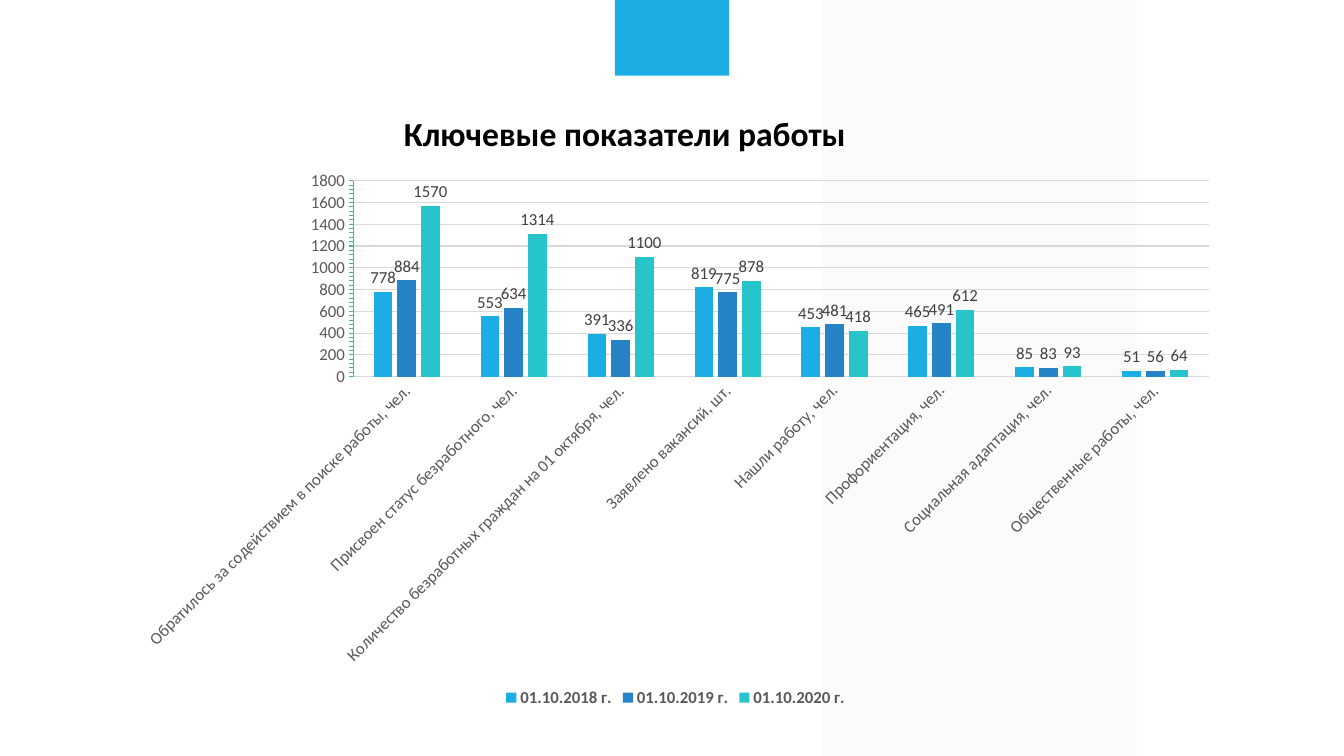
"""Build a slide with a clustered column chart of key work indicators."""
from dataclasses import dataclass

from lxml import etree
from pptx import Presentation
from pptx.chart.data import CategoryChartData
from pptx.dml.color import RGBColor
from pptx.enum.chart import XL_CHART_TYPE, XL_LABEL_POSITION, XL_LEGEND_POSITION, XL_TICK_MARK
from pptx.enum.shapes import MSO_SHAPE
from pptx.oxml.ns import qn
from pptx.util import Emu, Pt

PX = 9144
FONT = "Calibri"
BLACK = RGBColor(0x00, 0x00, 0x00)
DARK = RGBColor(0x40, 0x40, 0x40)
GREY = RGBColor(0x59, 0x59, 0x59)
RULE = RGBColor(0xD9, 0xD9, 0xD9)
PALE = RGBColor(0xF2, 0xF2, 0xF2)
GREEN = RGBColor(0x42, 0xBA, 0x97)
SKY = RGBColor(0x1C, 0xAD, 0xE4)
BLUE = RGBColor(0x26, 0x83, 0xC6)
TEAL = RGBColor(0x28, 0xC4, 0xCC)
COLUMNS = XL_CHART_TYPE.COLUMN_CLUSTERED
OUTSIDE_END = XL_LABEL_POSITION.OUTSIDE_END
BOTTOM = XL_LEGEND_POSITION.BOTTOM
TICK_NONE = XL_TICK_MARK.NONE
TICK_OUTSIDE = XL_TICK_MARK.OUTSIDE
PARALLELOGRAM = MSO_SHAPE.PARALLELOGRAM
RECTANGLE = MSO_SHAPE.RECTANGLE


@dataclass(frozen=True)
class Panel:
    kind: int
    box: tuple[int, int, int, int]
    color: RGBColor
    opacity: int = 100


@dataclass(frozen=True)
class Year:
    name: str
    values: tuple[int, ...]
    color: RGBColor


PANELS = (
    Panel(PARALLELOGRAM, (815, 0, 312, 750), PALE, 30),
    Panel(RECTANGLE, (610, 0, 113, 75), SKY),
)
CHART_BOX = (119, 79, 1102, 627)
TITLE = "Ключевые показатели работы"
CATEGORIES = (
    "Обратилось за содействием в поиске работы, чел.",
    "Присвоен статус безработного, чел.",
    "Количество безработных граждан на 01 октября, чел.",
    "Заявлено вакансий, шт.",
    "Нашли работу, чел.",
    "Профориентация, чел.",
    "Социальная адаптация, чел.",
    "Общественные работы, чел.",
)
YEARS = (
    Year("01.10.2018 г.", (778, 553, 391, 819, 453, 465, 85, 51), SKY),
    Year("01.10.2019 г.", (884, 634, 336, 775, 481, 491, 83, 56), BLUE),
    Year("01.10.2020 г.", (1570, 1314, 1100, 878, 418, 612, 93, 64), TEAL),
)


def emu(box: tuple[int, ...]) -> list[Emu]:
    """Turn px lengths into EMU."""
    return [Emu(v * PX) for v in box]


def style_font(font, size: int = 12, color: RGBColor = GREY, bold: bool = False) -> None:
    """Set the typeface, size, colour and weight."""
    font.name = FONT
    font.size = Pt(size)
    font.bold = bold
    font.color.rgb = color


def style_line(line, color: RGBColor) -> None:
    """Give a chart line its colour and thin width."""
    line.color.rgb = color
    line.width = Pt(0.75)


def add_panel(s, panel: Panel) -> None:
    """Draw one plain decorative panel."""
    sp = s.shapes.add_shape(panel.kind, *emu(panel.box))
    sp.shadow.inherit = False
    sp.line.fill.background()
    sp.fill.solid()
    sp.fill.fore_color.rgb = panel.color
    if panel.kind == PARALLELOGRAM:
        sp.adjustments[0] = 0
    if panel.opacity < 100:
        clr = sp.element.spPr.find(".//" + qn("a:srgbClr"))
        etree.SubElement(clr, qn("a:alpha"), val=str(panel.opacity * 1000))


def set_layout(parent, index: int, **place: str) -> None:
    """Fix the place of a chart part as fractions of the chart."""
    for old in parent.findall(qn("c:layout")):
        parent.remove(old)
    layout = etree.Element(qn("c:layout"))
    parent.insert(index, layout)
    manual = etree.SubElement(layout, qn("c:manualLayout"))
    for tag, val in place.items():
        etree.SubElement(manual, qn("c:" + tag), val=val)


def style_axes(chart) -> None:
    """Format both axes and the grid."""
    cat, val = chart.category_axis, chart.value_axis
    for axis, color in ((cat, RULE), (val, GREEN)):
        axis.major_tick_mark = TICK_NONE
        axis.minor_tick_mark = TICK_NONE
        style_font(axis.tick_labels.font)
        style_line(axis.format.line, color)
    cat_ax = chart.element.find(".//" + qn("c:catAx"))
    cat_ax.find(".//" + qn("a:bodyPr")).set("rot", "-2700000")
    val.minor_tick_mark = TICK_OUTSIDE
    val.minimum_scale, val.maximum_scale = 0, 1800
    val.major_unit, val.minor_unit = 200, 40
    style_line(val.major_gridlines.format.line, RULE)


def add_title(chart, text: str) -> None:
    """Write the chart title and place it."""
    title = chart.chart_title
    p = title.text_frame.paragraphs[0]
    r = p.add_run()
    r.text = text
    style_font(r.font, 24, BLACK, True)
    set_layout(title.element, 1, xMode="edge", yMode="edge", x="0.25", y="0.04")


def add_indicator_chart(s) -> None:
    """Draw the column chart with its labels and legend."""
    data = CategoryChartData()
    data.categories = CATEGORIES
    for year in YEARS:
        data.add_series(year.name, year.values)
    chart = s.shapes.add_chart(COLUMNS, *emu(CHART_BOX), data).chart
    style_font(chart.font, 10, BLACK)
    add_title(chart, TITLE)
    style_axes(chart)
    plot = chart.plots[0]
    plot.gap_width, plot.overlap, plot.vary_by_categories = 219, -27, False
    for series, year in zip(plot.series, YEARS):
        series.format.fill.solid()
        series.format.fill.fore_color.rgb = year.color
        labels = series.data_labels
        labels.show_value = True
        labels.position = OUTSIDE_END
        style_font(labels.font, color=DARK)
    chart.has_legend = True
    chart.legend.position = BOTTOM
    chart.legend.include_in_layout = False
    style_font(chart.legend.font, bold=True)
    set_layout(chart.element.find(".//" + qn("c:plotArea")), 0, layoutTarget="inner",
               xMode="edge", yMode="edge", x="0.21", y="0.16", w="0.77", h="0.31")


def main() -> None:
    """Build and save the slide."""
    prs = Presentation()
    prs.slide_width, prs.slide_height = emu((1333, 750))
    s = prs.slides.add_slide(prs.slide_layouts[6])
    for panel in PANELS:
        add_panel(s, panel)
    add_indicator_chart(s)
    prs.save("out.pptx")


if __name__ == "__main__":
    main()
